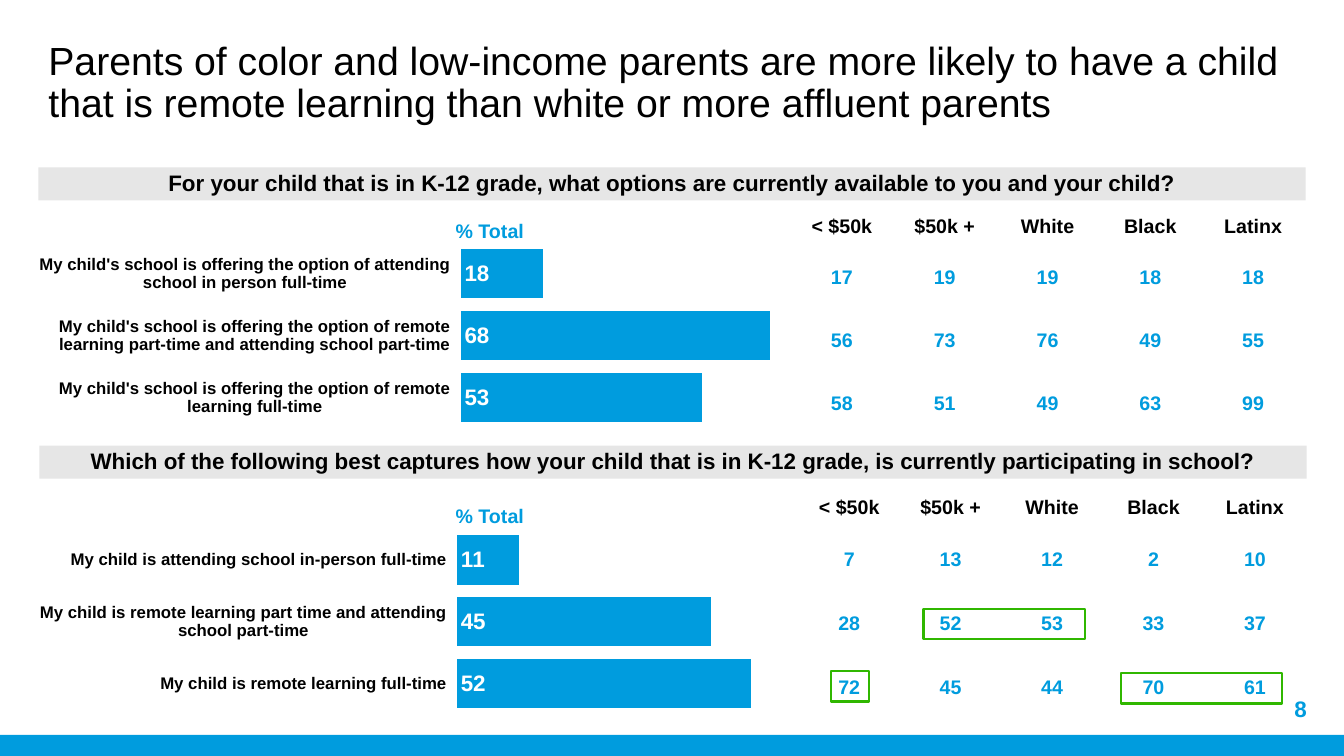
"""Build the slide on remote learning by income and race."""
from lxml.etree import SubElement
from pptx import Presentation
from pptx.chart.data import CategoryChartData
from pptx.dml.color import RGBColor
from pptx.enum.chart import XL_CHART_TYPE, XL_LABEL_POSITION, XL_TICK_MARK
from pptx.enum.shapes import MSO_SHAPE
from pptx.enum.text import MSO_ANCHOR, MSO_AUTO_SIZE, PP_ALIGN
from pptx.oxml.ns import qn
from pptx.util import Inches, Pt

COLORS = {"blue": "009CDE", "black": "000000", "white": "FFFFFF",
          "gray": "E6E6E6", "green": "30B700", "navy": "10069F"}
GROUPS = ["< $50k", "$50k +", "White", "Black", "Latinx"]
SECTIONS = [
    {
        "question": "For your child that is in K-12 grade, what options are "
                    "currently available to you and your child?",
        "band": (0.38, 1.66), "label_top": 2.12, "chart_top": 2.28,
        "plot": (0.423, 0.064, 0.459, 0.931),
        "table": (7.84, 2.04), "col": 1.02, "rows": [0.41, 0.61, 0.64, 0.61],
        "answers": [
            ("My child's school is offering the option of attending school in person full-time",
             18, [17, 19, 19, 18, 18]),
            ("My child's school is offering the option of remote learning part-time "
             "and attending school part-time", 68, [56, 73, 76, 49, 55]),
            ("My child's school is offering the option of remote learning full-time",
             53, [58, 51, 49, 63, 99]),
        ],
    },
    {
        "question": "Which of the following best captures how your child that is in "
                    "K-12 grade, is currently participating in school?",
        "band": (0.39, 4.42), "label_top": 4.95, "chart_top": 5.12,
        "plot": (0.42, 0.064, 0.569, 0.931),
        "table": (7.92, 4.83), "col": 1.006, "rows": [0.42, 0.61, 0.65, 0.62],
        "answers": [
            ("My child is attending school in-person full-time", 11, [7, 13, 12, 2, 10]),
            ("My child is remote learning part time and attending school part-time",
             45, [28, 52, 53, 33, 37]),
            ("My child is remote learning full-time", 52, [72, 45, 44, 70, 61]),
        ],
    },
]
HIGHLIGHTS = [(8.24, 6.66, 0.38), (11.12, 6.68, 1.6), (9.16, 6.04, 1.6)]


def set_font(font, size, color, bold=True):
    font.name = "Arial"
    font.size = Pt(size)
    font.bold = bold
    font.color.rgb = RGBColor.from_string(COLORS[color])


def add_rect(left, top, width, height, fill=None, line=None):
    sp = s.shapes.add_shape(MSO_SHAPE.RECTANGLE, Inches(left), Inches(top),
                            Inches(width), Inches(height))
    sp.shadow.inherit = False
    for part, color in ((sp.fill, fill), (sp.line.fill, line)):
        if color:
            part.solid()
            part.fore_color.rgb = RGBColor.from_string(COLORS[color])
        else:
            part.background()
    return sp


prs = Presentation()
prs.slide_width, prs.slide_height = Inches(13.33), Inches(7.5)
s = prs.slides.add_slide(prs.slide_layouts[5])

add_rect(0, 7.29, 13.33, 0.21, fill="blue")

title = s.shapes.title
title.left, title.top = Inches(0.38), Inches(0.36)
title.width, title.height = Inches(12.58), Inches(1.13)
tf = title.text_frame
tf.text = ("Parents of color and low-income parents are more likely to have a child "
           "that is remote learning than white or more affluent parents")
tf.word_wrap = True
tf.auto_size = MSO_AUTO_SIZE.NONE
tf.vertical_anchor = MSO_ANCHOR.TOP
p = tf.paragraphs[0]
p.alignment = PP_ALIGN.LEFT
p.line_spacing = 0.9
set_font(p.font, 28, "black", bold=False)

for section in SECTIONS:
    data = CategoryChartData()
    data.categories = [answer for answer, total, values in section["answers"]]
    data.add_series("Series 1", [total for answer, total, values in section["answers"]])
    chart = s.shapes.add_chart(
        XL_CHART_TYPE.BAR_CLUSTERED, Inches(0.39), Inches(section["chart_top"]),
        Inches(9.86), Inches(1.98), data).chart
    chart.has_legend = False
    chart.has_title = False
    set_font(chart.font, 16, "navy")

    axis = chart.category_axis
    axis.reverse_order = True
    axis.major_tick_mark = XL_TICK_MARK.OUTSIDE
    axis.format.line.fill.background()
    set_font(axis.tick_labels.font, 12, "black")
    axis = chart.value_axis
    axis.minimum_scale, axis.maximum_scale = 0, 100
    axis.has_major_gridlines = False
    axis.visible = False

    plot = chart.plots[0]
    plot.gap_width = 25
    plot.vary_by_categories = False
    fill = plot.series[0].format.fill
    fill.solid()
    fill.fore_color.rgb = RGBColor.from_string(COLORS["blue"])
    plot.has_data_labels = True
    labels = plot.data_labels
    labels.show_value = True
    labels.position = XL_LABEL_POSITION.INSIDE_BASE
    set_font(labels.font, 16, "white")

    area = chart.element.find(".//" + qn("c:plotArea"))
    for old in area.findall(qn("c:layout")):
        area.remove(old)
    layout = SubElement(area, qn("c:layout"))
    area.insert(0, layout)
    manual = SubElement(layout, qn("c:manualLayout"))
    settings = [("layoutTarget", "inner"), ("xMode", "edge"), ("yMode", "edge")]
    for tag, value in settings + list(zip("xywh", section["plot"])):
        SubElement(manual, qn("c:" + tag)).set("val", str(value))

    left, top = section["table"]
    rows = [GROUPS] + [values for answer, total, values in section["answers"]]
    table = s.shapes.add_table(
        len(rows), len(GROUPS), Inches(left), Inches(top),
        Inches(section["col"] * len(GROUPS)), Inches(sum(section["rows"]))).table
    table.horz_banding = False
    for column in table.columns:
        column.width = Inches(section["col"])
    for i, values in enumerate(rows):
        table.rows[i].height = Inches(section["rows"][i])
        for j, value in enumerate(values):
            cell = table.cell(i, j)
            cell.fill.background()
            cell.vertical_anchor = MSO_ANCHOR.MIDDLE
            cell.text = str(value)
            p = cell.text_frame.paragraphs[0]
            p.alignment = PP_ALIGN.CENTER
            set_font(p.font, 14, "blue" if i else "black")

    left, top = section["band"]
    tf = add_rect(left, top, 12.57, 0.33, fill="gray").text_frame
    tf.text = section["question"]
    tf.word_wrap = True
    tf.vertical_anchor = MSO_ANCHOR.MIDDLE
    p = tf.paragraphs[0]
    p.alignment = PP_ALIGN.CENTER
    p.line_spacing = 0.9
    p.space_before = Pt(10)
    set_font(p.font, 16, "black")

    tf = s.shapes.add_textbox(Inches(4.42), Inches(section["label_top"]),
                              Inches(1.17), Inches(0.34)).text_frame
    tf.text = "% Total"
    tf.word_wrap = True
    tf.auto_size = MSO_AUTO_SIZE.SHAPE_TO_FIT_TEXT
    set_font(tf.paragraphs[0].font, 14, "blue")

for left, top, width in HIGHLIGHTS:
    add_rect(left, top, width, 0.3, line="green").line.width = Pt(1.5)

tf = s.shapes.add_textbox(Inches(9.96), Inches(6.83), Inches(3), Inches(0.4)).text_frame
tf.text = "8"
tf.word_wrap = True
tf.vertical_anchor = MSO_ANCHOR.MIDDLE
tf.margin_left = tf.margin_right = tf.margin_top = tf.margin_bottom = 0
p = tf.paragraphs[0]
p.alignment = PP_ALIGN.RIGHT
set_font(p.font, 16, "blue")

prs.save("out.pptx")
